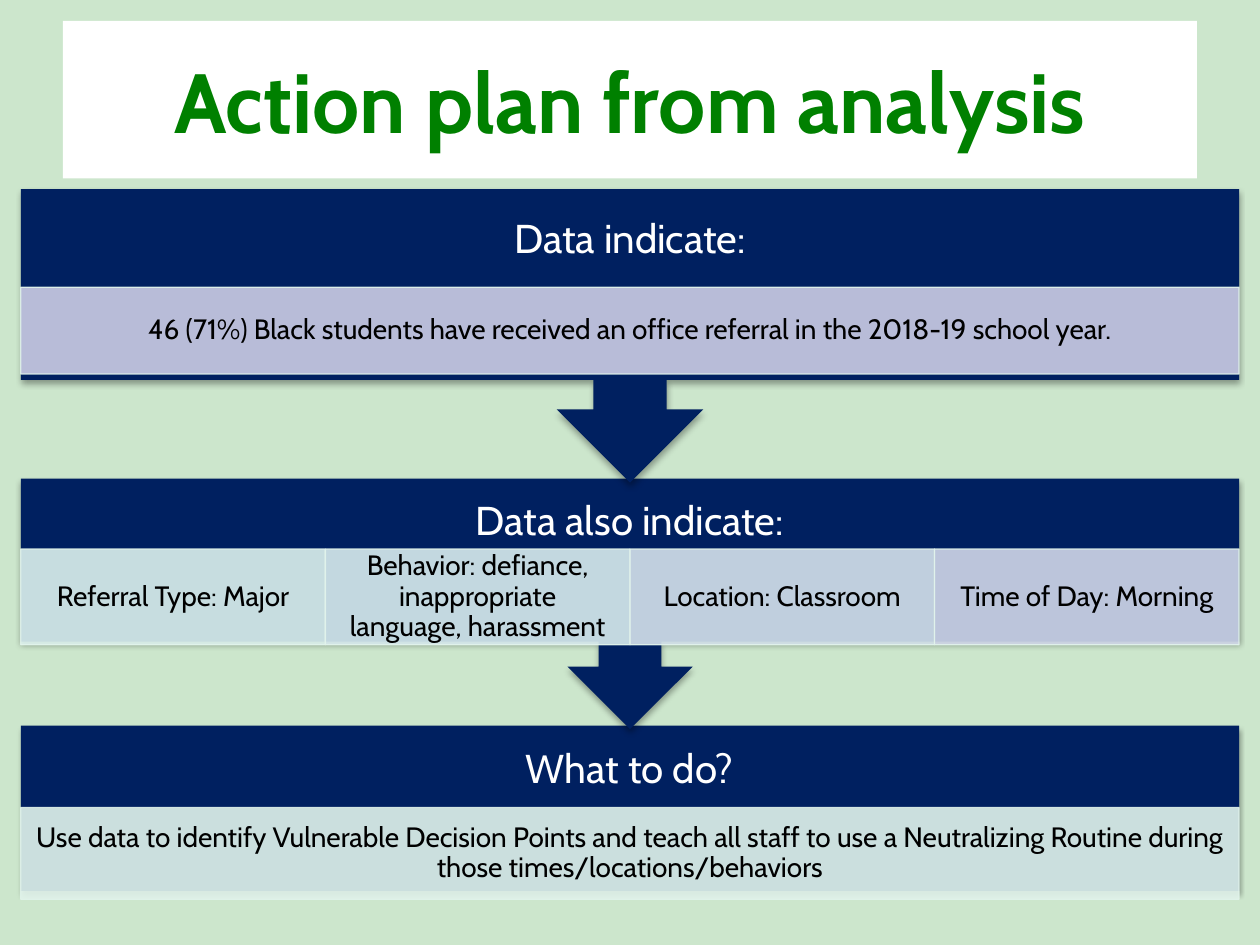
from lxml.etree import SubElement
from pptx import Presentation
from pptx.dml.color import RGBColor
from pptx.enum.shapes import MSO_SHAPE
from pptx.enum.text import MSO_ANCHOR, PP_ALIGN
from pptx.oxml.ns import qn
from pptx.util import Cm, Pt

TITLE = "Action plan from analysis"
STAGES = [
    {
        "heading": "Data indicate:", "shape": MSO_SHAPE.UP_ARROW_CALLOUT,
        "top": 3.81, "height": 5.92, "heading_height": 2.08,
        "detail_top": 5.79, "detail_height": 1.75,
        "details": [("46 (71%) Black students have received an office referral "
                     "in the 2018-19 school year.", "CDCDE6")],
    },
    {
        "heading": "Data also indicate:", "shape": MSO_SHAPE.UP_ARROW_CALLOUT,
        "top": 9.65, "height": 5.05, "heading_height": 1.78,
        "detail_top": 11.07, "detail_height": 1.93,
        "details": [
            ("Referral Type: Major", "DDF2EE"),
            ("Behavior: defiance, inappropriate language, harassment", "D9ECEF"),
            ("Location: Classroom", "D5E3EC"),
            ("Time of Day: Morning", "D1D8E9"),
        ],
    },
    {
        "heading": "What to do?", "shape": MSO_SHAPE.RECTANGLE,
        "top": 14.63, "height": 3.33, "heading_height": 1.8,
        "detail_top": 16.28, "detail_height": 1.85,
        "details": [("Use data to identify Vulnerable Decision Points and teach all staff "
                     "to use a Neutralizing Routine during those times/locations/behaviors",
                     "E2F4EC")],
    },
]
THEME = {
    "font": "Cabin", "background": "CCE6CC", "title_fill": "FFFFFF", "title": "008000",
    "stage": "002060", "heading": "FFFFFF", "detail": "000000", "border": "E2F4EC",
    "title_size": 48, "heading_size": 23, "detail_size": 16, "opacity": 90,
}
LEFT, WIDTH = 0.42, 24.56


def paint(color_format, color):
    color_format.solid()
    color_format.fore_color.rgb = RGBColor.from_string(color)


def set_opacity(fill_parent, percent):
    color = fill_parent.find(qn("a:solidFill")).find(qn("a:srgbClr"))
    SubElement(color, qn("a:alpha"), val=str(percent * 1000))


def write(shape, text, role, insets, spacing=0.9, bold=False):
    frame = shape.text_frame
    frame.word_wrap = True
    frame.vertical_anchor = MSO_ANCHOR.MIDDLE
    frame.margin_left = frame.margin_right = Cm(insets[0])
    frame.margin_top = frame.margin_bottom = Cm(insets[1])
    frame.text = text
    paragraph = frame.paragraphs[0]
    paragraph.alignment = PP_ALIGN.CENTER
    paragraph.line_spacing = spacing
    font = paragraph.runs[0].font
    font.name = THEME["font"]
    font.size = Pt(THEME[role + "_size"])
    font.bold = bold
    font.color.rgb = RGBColor.from_string(THEME[role])


def add_shadow(shape):
    effects = shape._element.spPr.find(qn("a:effectLst"))
    shadow = SubElement(effects, qn("a:outerShdw"), blurRad=str(Pt(3.1)),
                        dist=str(Pt(1.8)), dir="5400000", rotWithShape="0")
    color = SubElement(shadow, qn("a:srgbClr"), val="000000")
    SubElement(color, qn("a:alpha"), val="35000")


def add_box(slide, kind, left, top, width, height, color):
    shape = slide.shapes.add_shape(kind, Cm(left), Cm(top), Cm(width), Cm(height))
    shape.shadow.inherit = False
    paint(shape.fill, color)
    shape.line.fill.background()
    return shape


def add_stage(slide, stage):
    body = add_box(slide, stage["shape"], LEFT, stage["top"], WIDTH, stage["height"],
                   THEME["stage"])
    add_shadow(body)
    if stage["shape"] == MSO_SHAPE.UP_ARROW_CALLOUT:
        body.rotation = 180

    heading = slide.shapes.add_textbox(Cm(LEFT), Cm(stage["top"]), Cm(WIDTH),
                                       Cm(stage["heading_height"]))
    write(heading, stage["heading"], "heading", (0.45, 0.45))

    cell_width = WIDTH / len(stage["details"])
    for column, (text, color) in enumerate(stage["details"]):
        cell = add_box(slide, MSO_SHAPE.RECTANGLE, LEFT + column * cell_width,
                       stage["detail_top"], cell_width, stage["detail_height"], color)
        paint(cell.line.fill, THEME["border"])
        cell.line.width = Pt(0.75)
        properties = cell._element.spPr
        for parent in (properties, properties.find(qn("a:ln"))):
            set_opacity(parent, THEME["opacity"])
        write(cell, text, "detail", (0.3, 0.05))


def main():
    presentation = Presentation()
    presentation.slide_width, presentation.slide_height = Cm(25.4), Cm(19.05)
    slide = presentation.slides.add_slide(presentation.slide_layouts[6])
    paint(slide.background.fill, THEME["background"])

    title = add_box(slide, MSO_SHAPE.RECTANGLE, 1.27, 0.42, 22.86, 3.18, THEME["title_fill"])
    write(title, TITLE, "title", (0.25, 0.13), spacing=1, bold=True)
    for stage in reversed(STAGES):
        add_stage(slide, stage)
    presentation.save("out.pptx")


if __name__ == "__main__":
    main()
